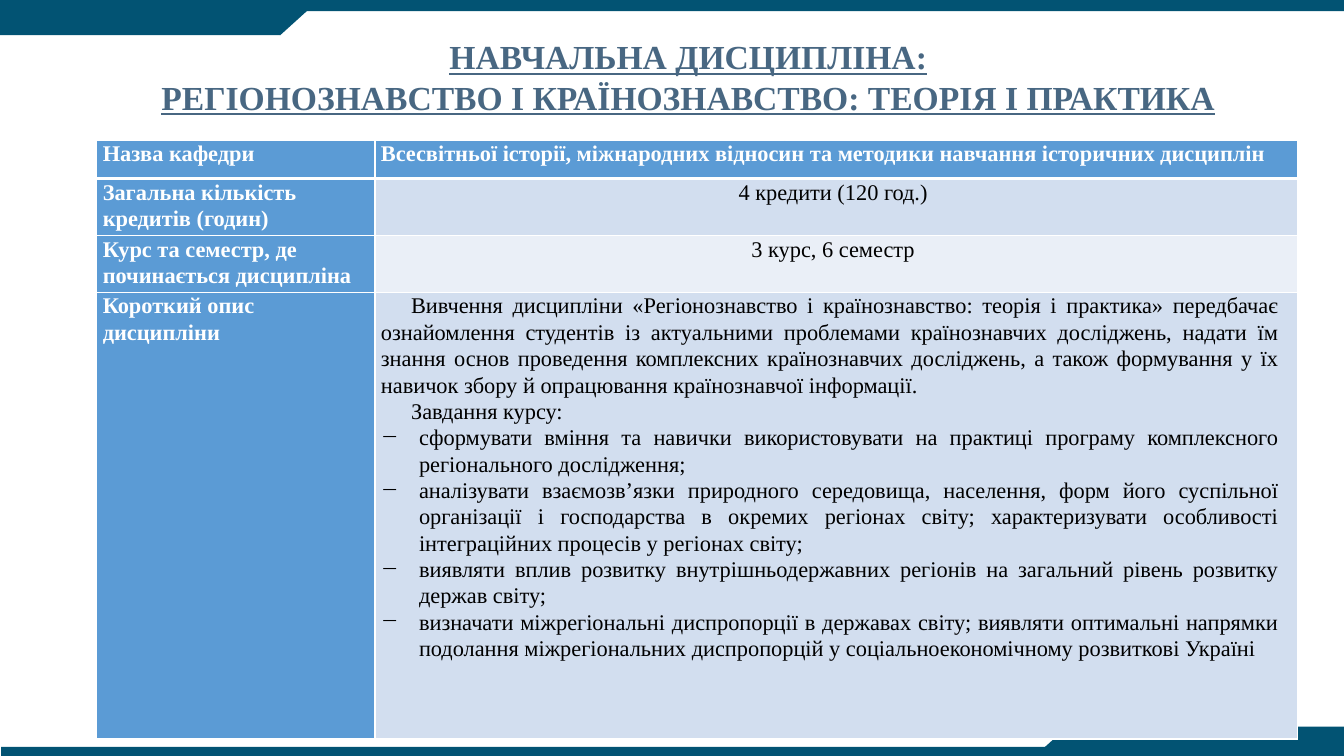
from dataclasses import dataclass

from lxml import etree
from pptx import Presentation
from pptx import util as u
from pptx.dml.color import RGBColor
from pptx.enum import shapes, text
from pptx.oxml import ns

COLORS = {
    "frame": "025373",
    "title": "486782",
    "label": "5B9BD5",
    "band_dark": "D2DEEF",
    "band_light": "EAEFF7",
    "white": "FFFFFF",
    "black": "000000",
}
FONT = "Times New Roman"
RECT = shapes.MSO_SHAPE.RECTANGLE
MERGE = shapes.MSO_SHAPE.FLOWCHART_MERGE
LEFT, CENTER, JUSTIFY = text.PP_ALIGN.LEFT, text.PP_ALIGN.CENTER, text.PP_ALIGN.JUSTIFY


@dataclass
class FramePart:
    outline: shapes.MSO_SHAPE
    left: float
    top: float
    width: float
    height: float
    rotation: float = 0


@dataclass
class Line:
    words: str
    align: text.PP_ALIGN = LEFT
    margin: float = 0
    indent: float = 0
    bullet: str = ""


@dataclass
class Entry:
    lines: list[Line]
    fill: str
    color: str
    bold: bool
    right_inset: float = 0.15


def label(words: str) -> Entry:
    return Entry([Line(words)], "label", "white", True)


def value(words: str, fill: str) -> Entry:
    return Entry([Line(words, CENTER)], fill, "black", False, 0.3)


def opening(words: str) -> Line:
    return Line(words, JUSTIFY, 0, 0.76)


def task(words: str) -> Line:
    return Line(words, JUSTIFY, 0.96, -0.96, "−")


FRAME = [
    FramePart(RECT, 0, 0, 33.87, 0.28),
    FramePart(RECT, 0.03, 18.82, 33.84, 0.23),
    FramePart(RECT, 0, 0.13, 7.06, 0.76),
    FramePart(MERGE, 6.22, 0.13, 1.68, 0.76),
    FramePart(RECT, 26.9, 18.31, 6.97, 0.74),
    FramePart(MERGE, 26.06, 18.31, 1.68, 0.76, 180),
]
TITLE = [
    "НАВЧАЛЬНА ДИСЦИПЛІНА:",
    "РЕГІОНОЗНАВСТВО І КРАЇНОЗНАВСТВО: ТЕОРІЯ І ПРАКТИКА",
]
DESCRIPTION = [
    opening(
        "Вивчення дисципліни «Регіонознавство і країнознавство: теорія і практика» передбачає "
        "ознайомлення студентів із актуальними проблемами країнознавчих досліджень, надати їм "
        "знання основ проведення комплексних країнознавчих досліджень, а також формування "
        "у їх навичок збору й опрацювання країнознавчої інформації."
    ),
    opening("Завдання курсу:"),
    task(
        "сформувати вміння та навички використовувати на практиці програму комплексного "
        "регіонального дослідження;"
    ),
    task(
        "аналізувати взаємозв’язки природного середовища, населення, форм його суспільної "
        "організації і господарства в окремих регіонах світу; характеризувати особливості "
        "інтеграційних процесів у регіонах світу;"
    ),
    task(
        "виявляти вплив розвитку внутрішньодержавних регіонів на загальний рівень розвитку "
        "держав світу;"
    ),
    task(
        "визначати міжрегіональні диспропорції в державах світу; виявляти оптимальні "
        "напрямки подолання міжрегіональних диспропорцій у соціальноекономічному розвиткові "
        "Україні"
    ),
]
COURSE = [
    [
        label("Назва кафедри"),
        label("Всесвітньої історії, міжнародних відносин та методики навчання історичних дисциплін"),
    ],
    [label("Загальна кількість кредитів (годин)"), value("4 кредити (120 год.)", "band_dark")],
    [label("Курс та семестр, де починається дисципліна"), value("3 курс, 6 семестр", "band_light")],
    [
        label("Короткий опис дисципліни"),
        Entry(DESCRIPTION, "band_dark", "black", False, 0.46),
    ],
]
COLUMN_WIDTHS = [7.01, 23.24]
ROW_HEIGHTS = [0.97, 1.4, 1.4, 11.25]


def rgb(name: str) -> RGBColor:
    return RGBColor.from_string(COLORS[name])


def apply(target, formats: dict) -> None:
    for attribute, setting in formats.items():
        setattr(target, attribute, setting)


def style_font(font, size: float, color: str, bold: bool, underline: bool = False) -> None:
    apply(font, {"name": FONT, "size": u.Pt(size), "bold": bold, "underline": underline})
    font.color.rgb = rgb(color)


def draw_frame_part(slide, part: FramePart) -> None:
    box = [u.Cm(n) for n in (part.left, part.top, part.width, part.height)]
    piece = slide.shapes.add_shape(part.outline, *box)
    piece.rotation = part.rotation
    piece.shadow.inherit = False
    piece.fill.solid()
    piece.fill.fore_color.rgb = rgb("frame")
    piece.line.fill.background()


def draw_title(slide) -> None:
    title = slide.shapes.add_textbox(u.Cm(0.81), u.Cm(0.79), u.Cm(33.07), u.Cm(2.31)).text_frame
    title.word_wrap = True
    title.text = "\n".join(TITLE)
    for heading in title.paragraphs:
        heading.alignment = CENTER
        style_font(heading.runs[0].font, 24, "title", True, True)


def add_borders(cell, bottom_width: float) -> None:
    properties = cell._tc.get_or_add_tcPr()
    for side, width in {"L": 1, "R": 1, "T": 1, "B": bottom_width}.items():
        border = etree.SubElement(properties, ns.qn(f"a:ln{side}"), w=str(u.Pt(width)))
        paint = etree.SubElement(border, ns.qn("a:solidFill"))
        etree.SubElement(paint, ns.qn("a:srgbClr"), val=COLORS["white"])


def write_line(paragraph, line: Line, entry: Entry) -> None:
    apply(paragraph, {"alignment": line.align, "line_spacing": 1.06})
    properties = paragraph._p.get_or_add_pPr()
    properties.set("marL", str(u.Cm(line.margin)))
    properties.set("indent", str(u.Cm(line.indent)))
    if line.bullet:
        etree.SubElement(properties, ns.qn("a:buChar"), char=line.bullet)
    run = paragraph.add_run()
    run.text = line.words
    style_font(run.font, 16, entry.color, entry.bold)


def fill_cell(cell, entry: Entry, bottom_width: float) -> None:
    apply(cell, {
        "margin_left": u.Cm(0.15),
        "margin_right": u.Cm(entry.right_inset),
        "margin_top": 0,
        "margin_bottom": 0,
    })
    add_borders(cell, bottom_width)
    cell.fill.solid()
    cell.fill.fore_color.rgb = rgb(entry.fill)
    for index, line in enumerate(entry.lines):
        frame = cell.text_frame
        write_line(frame.add_paragraph() if index else frame.paragraphs[0], line, entry)


def draw_course(slide) -> None:
    course = slide.shapes.add_table(
        len(ROW_HEIGHTS), len(COLUMN_WIDTHS), u.Cm(2.44), u.Cm(3.53),
        u.Cm(sum(COLUMN_WIDTHS)), u.Cm(sum(ROW_HEIGHTS)),
    ).table
    for column, width in zip(course.columns, COLUMN_WIDTHS):
        column.width = u.Cm(width)
    for index, (row, height, entries) in enumerate(zip(course.rows, ROW_HEIGHTS, COURSE)):
        row.height = u.Cm(height)
        for cell, entry in zip(row.cells, entries):
            fill_cell(cell, entry, 1 if index else 3)


def main() -> None:
    deck = Presentation()
    apply(deck, {"slide_width": u.Cm(33.87), "slide_height": u.Cm(19.05)})
    slide = deck.slides.add_slide(deck.slide_layouts[6])
    for part in FRAME:
        draw_frame_part(slide, part)
    draw_title(slide)
    draw_course(slide)
    deck.save("out.pptx")


if __name__ == "__main__":
    main()
